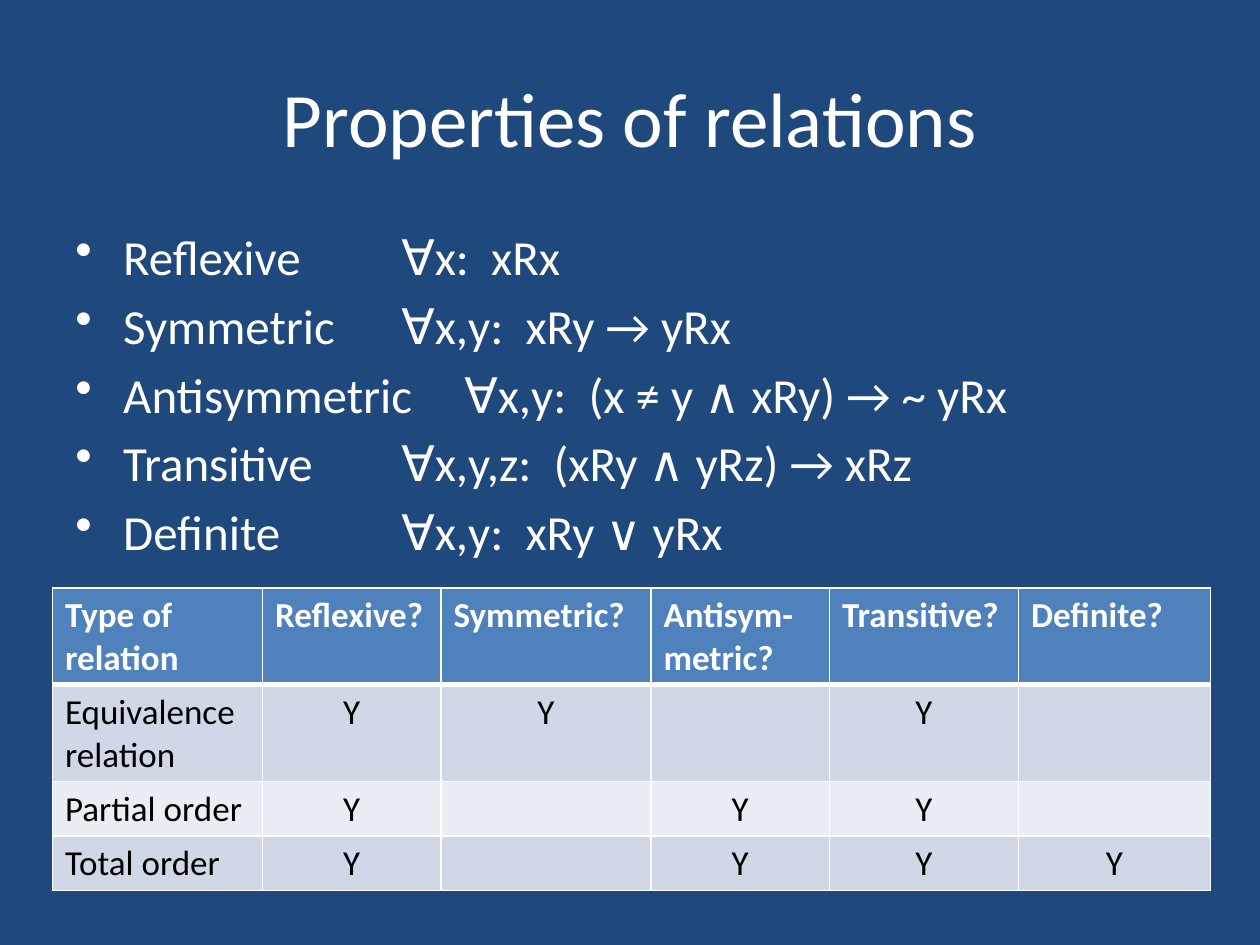
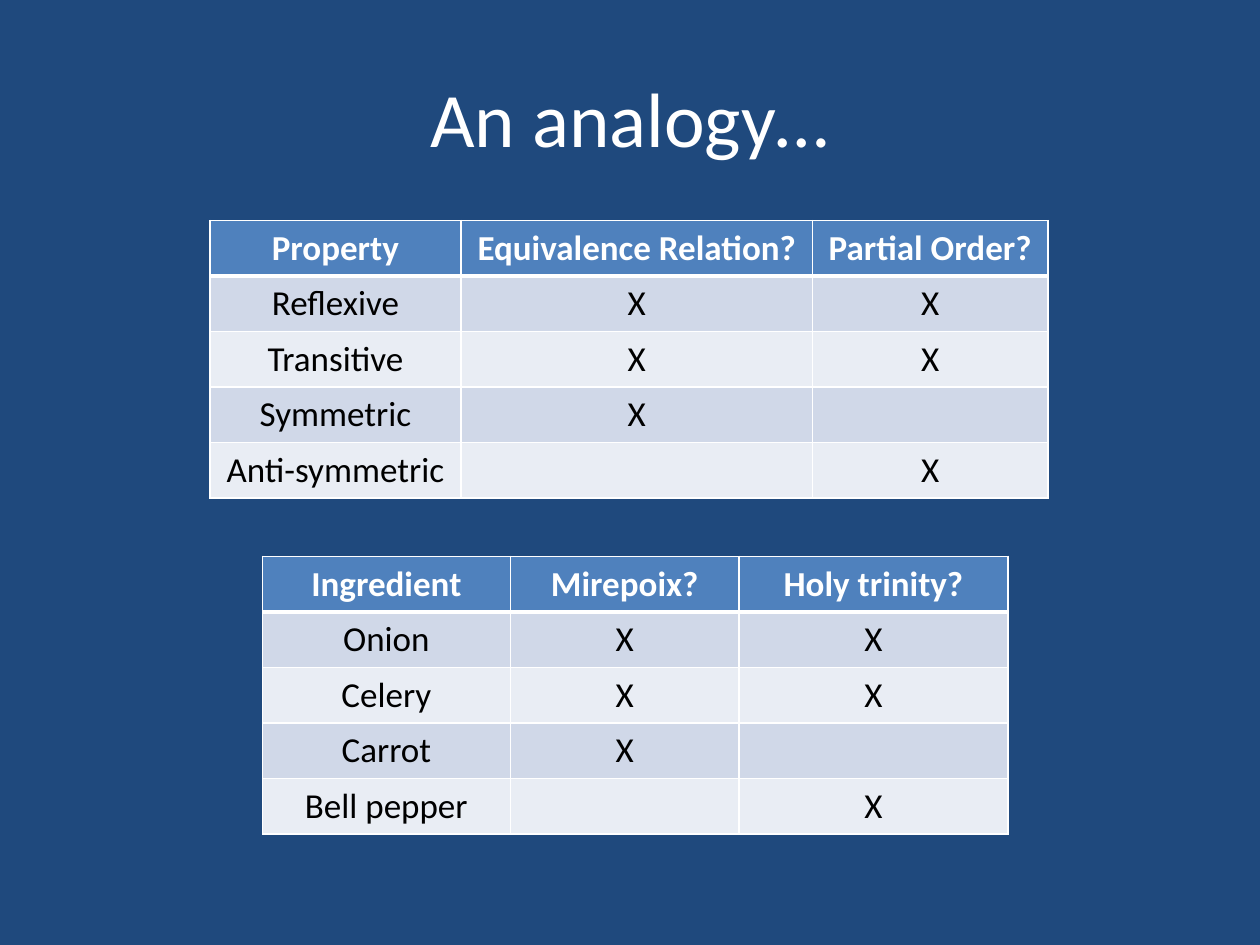
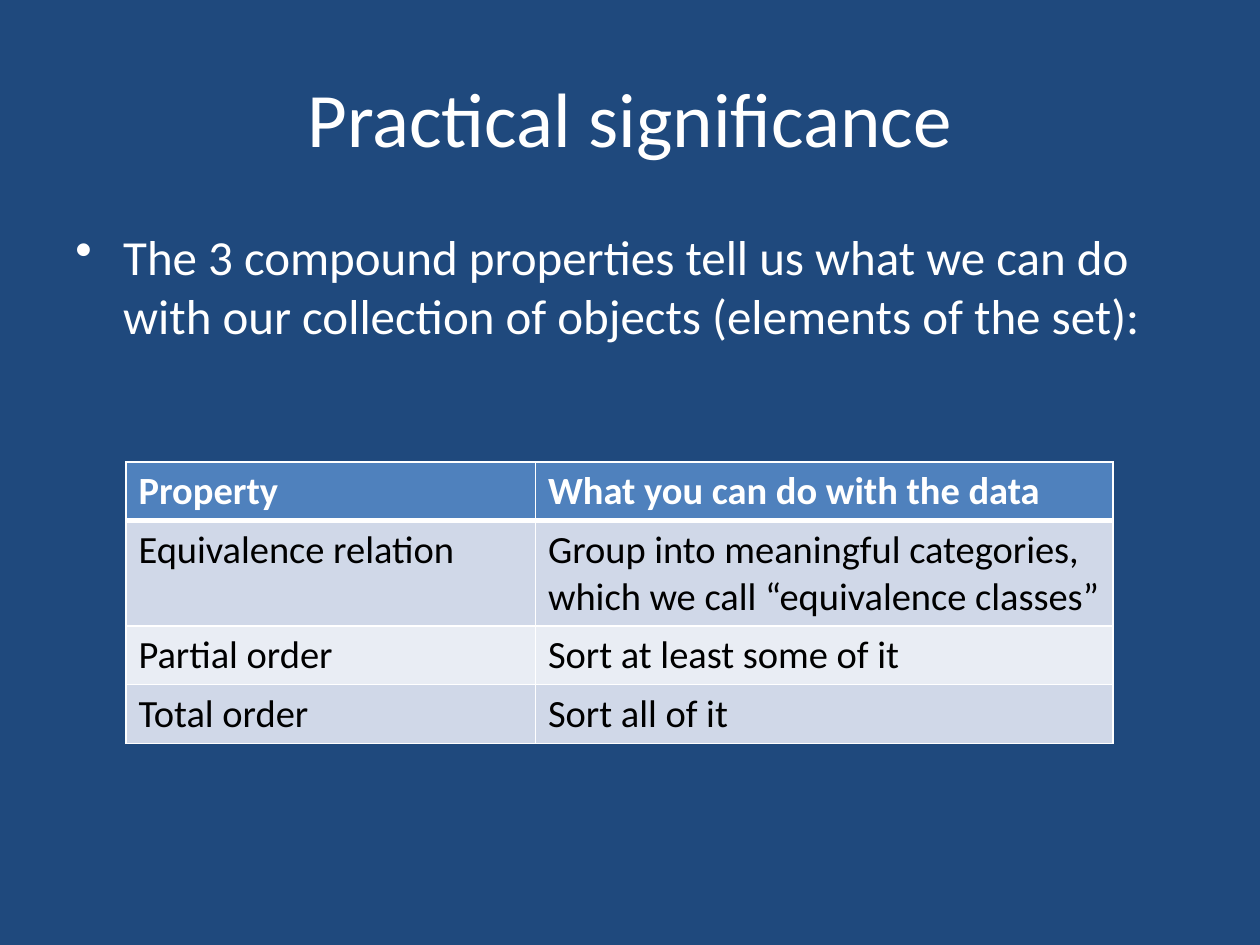
"""Builds three slides on properties of relations, with bullets and tables."""
import pptx
import pptx.dml.color
import pptx.enum.text
import pptx.oxml
import pptx.oxml.ns
import pptx.util

FONT = "Calibri"
NAVY, BLUE, WHITE, BLACK = "1F497D", "4F81BD", "FFFFFF", "000000"
BANDS = ["D0D8E8", "E9EDF4"]
CENTER = pptx.enum.text.PP_ALIGN.CENTER
ROW_HEIGHT = 5

deck = pptx.Presentation()
deck.slide_width, deck.slide_height = pptx.util.Inches(10), pptx.util.Inches(7.5)
UNIT = deck.slide_width / 120


def style(paragraph, size, color, bold=False):
    """Set the font of a whole paragraph."""
    font = paragraph.font
    font.name, font.size, font.bold = FONT, pptx.util.Pt(size), bold
    font.color.rgb = pptx.dml.color.RGBColor.from_string(color)


def add_grid(slide, left, top, widths, rows, size, centred):
    """Add a table with a header row, banded rows and white borders."""
    box = [round(n * UNIT) for n in (left, top, sum(widths), ROW_HEIGHT * len(rows))]
    table = slide.shapes.add_table(len(rows), len(widths), *box).table
    for column, width in zip(table.columns, widths):
        column.width = round(width * UNIT)
    for r, row in enumerate(rows):
        header = r == 0
        for c, text in enumerate(row):
            cell = table.cell(r, c)
            cell.text = text
            cell.fill.solid()
            fill = BLUE if header else BANDS[(r - 1) % 2]
            cell.fill.fore_color.rgb = pptx.dml.color.RGBColor.from_string(fill)
            for paragraph in cell.text_frame.paragraphs:
                style(paragraph, size, WHITE if header else BLACK, header)
                if centred or text in ("X", "Y"):
                    paragraph.alignment = CENTER
            points = {"L": 1, "R": 1, "T": 3 if r == 1 else 1, "B": 3 if header else 1}
            for place, (side, width) in enumerate(points.items()):
                border = pptx.oxml.parse_xml(
                    f'<a:ln{side} {pptx.oxml.ns.nsdecls("a")} w="{pptx.util.Pt(width)}">'
                    f'<a:solidFill><a:srgbClr val="{WHITE}"/></a:solidFill></a:ln{side}>')
                cell._tc.get_or_add_tcPr().insert(place, border)


relation_types = [
    ["Type of\nrelation", "Reflexive?", "Symmetric?", "Antisym-metric?", "Transitive?", "Definite?"],
    ["Equivalence relation", "Y", "Y", "", "Y", ""],
    ["Partial order", "Y", "", "Y", "Y", ""],
    ["Total order", "Y", "", "Y", "Y", "Y"],
]
relation_properties = [
    ["Property", "Equivalence Relation?", "Partial Order?"],
    ["Reflexive", "X", "X"],
    ["Transitive", "X", "X"],
    ["Symmetric", "X", ""],
    ["Anti-symmetric", "", "X"],
]
ingredients = [
    ["Ingredient", "Mirepoix?", "Holy trinity?"],
    ["Onion", "X", "X"],
    ["Celery", "X", "X"],
    ["Carrot", "X", ""],
    ["Bell pepper", "", "X"],
]
data_uses = [
    ["Property", "What you can do with the data"],
    ["Equivalence relation", "Group into meaningful categories, which we call “equivalence classes”"],
    ["Partial order", "Sort at least some of it"],
    ["Total order", "Sort all of it"],
]
definitions = [
    "Reflexive\t\t ∀x:  xRx",
    "Symmetric\t ∀x,y:  xRy → yRx",
    "Antisymmetric\t ∀x,y:  (x ≠ y ∧ xRy) → ~ yRx",
    "Transitive\t\t ∀x,y,z:  (xRy ∧ yRz) → xRz",
    "Definite\t\t ∀x,y:  xRy ∨ yRx",
]
significance = ["The 3 compound properties tell us what we can do with our collection "
                "of objects (elements of the set):"]

topics = [
    ("Properties of relations", definitions, 69,
     [(5, 56, [20, 17, 20, 17, 18, 18.3], relation_types, 20, False)]),
    ("An analogy…", [], 0,
     [(20, 21, [23.9, 33.5, 22.4], relation_properties, 20, True),
      (25, 53, [23.6, 21.8, 25.6], ingredients, 20, True)]),
    ("Practical significance", significance, 59.4,
     [(12, 44, [39, 55], data_uses, 22, False)]),
]

background = deck.slide_master.background.fill
background.solid()
background.fore_color.rgb = pptx.dml.color.RGBColor.from_string(NAVY)

for heading, bullets, body_height, tables in topics:
    slide = deck.slides.add_slide(deck.slide_layouts[5])
    title = slide.shapes.title
    title.left, title.top, title.width, title.height = [
        round(n * UNIT) for n in (6, 3.6, 108, 15)]
    title.text_frame.text = heading
    title.text_frame.vertical_anchor = pptx.enum.text.MSO_ANCHOR.MIDDLE
    title.text_frame.paragraphs[0].alignment = CENTER
    style(title.text_frame.paragraphs[0], 44, WHITE)

    if bullets:
        body_box = [round(n * UNIT) for n in (6, 21, 108, body_height)]
        body = slide.shapes.add_textbox(*body_box).text_frame
        body.word_wrap = True
        body.text = "\n".join(bullets)
        for paragraph in body.paragraphs:
            style(paragraph, 28, WHITE)
            paragraph.space_before = pptx.util.Pt(5.6)
            properties = paragraph._p.get_or_add_pPr()
            indent = pptx.util.Inches(0.38)
            properties.set("marL", str(indent))
            properties.set("indent", str(-indent))
            properties.find(pptx.oxml.ns.qn("a:defRPr")).addprevious(pptx.oxml.parse_xml(
                f'<a:buChar {pptx.oxml.ns.nsdecls("a")} char="•"/>'))

    for table in tables:
        add_grid(slide, *table)

deck.save("out.pptx")
